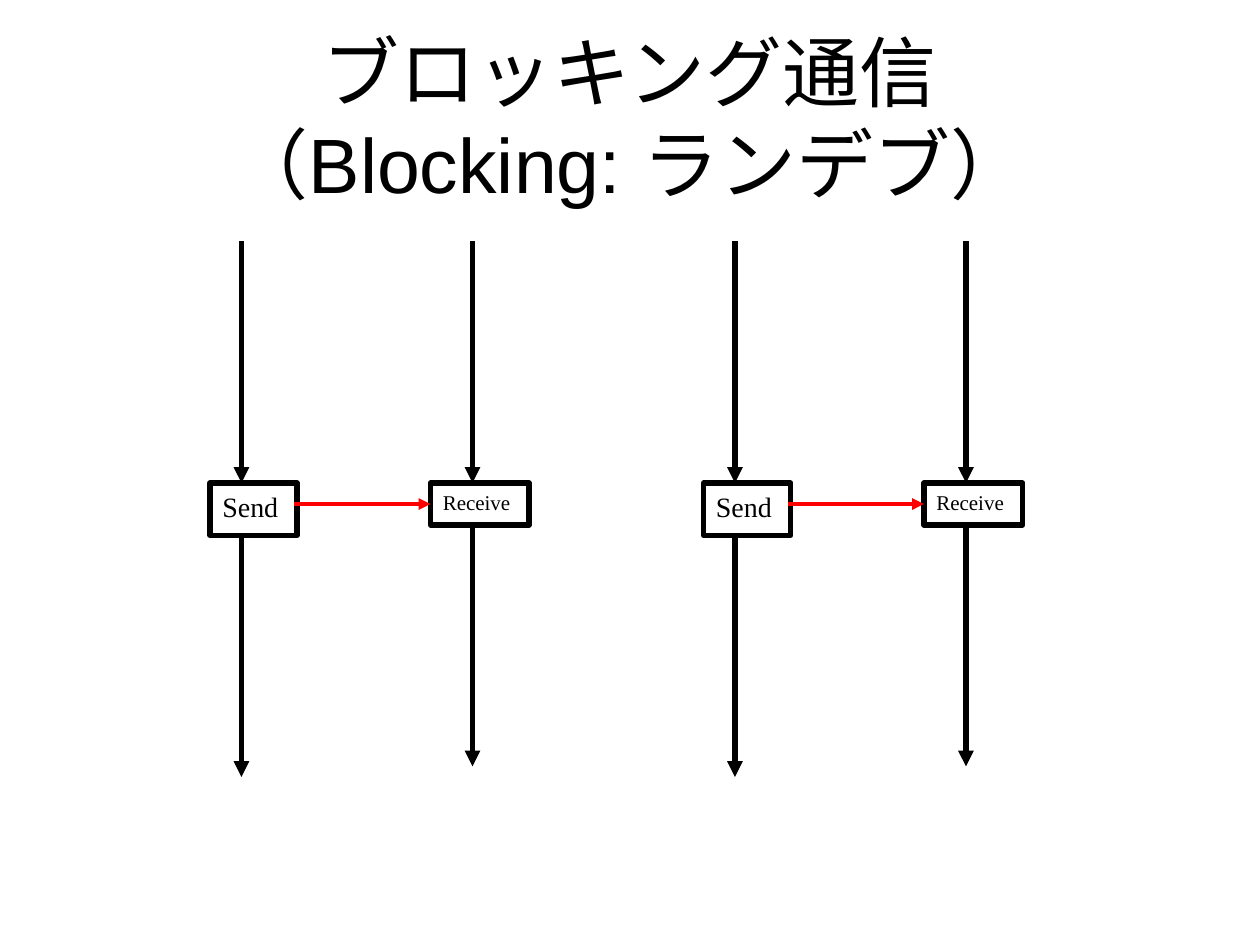
from dataclasses import dataclass
from lxml.etree import SubElement as Sub
from pptx import Presentation
from pptx.dml.color import RGBColor as RGB
from pptx.enum.shapes import MSO_CONNECTOR as Link, MSO_SHAPE as Form
from pptx.enum.text import MSO_ANCHOR as Anchor, MSO_AUTO_SIZE as Fit, PP_ALIGN as Align
from pptx.oxml.ns import qn
from pptx.util import Inches, Pt


@dataclass(frozen=True)
class Theme:
    ink: RGB = RGB(0, 0, 0)
    call: RGB = RGB(255, 0, 0)
    head: str = "Arial"
    body: str = "Times New Roman"
    title: float = 44
    send: float = 16
    recv: float = 12
    rule: float = 3
    thin: float = 2.25


T = Theme()
COLS, ROWS = 120, 90
WIDE, HIGH = Inches(10), Inches(7.5)


def col(n):
    return round(WIDE * n / COLS)


def row(n):
    return round(HIGH * n / ROWS)


def put(item, vals):
    for key, val in vals.items():
        setattr(item, key, val)


def style(para, face, size):
    put(para.font, {"name": face, "size": Pt(size)})
    para.font.color.rgb = T.ink


def arrow(slide, start, end, hue, width):
    line = slide.shapes.add_connector(
        Link.STRAIGHT, col(start[0]), row(start[1]), col(end[0]), row(end[1]))
    line.line.color.rgb = hue
    line.line.width = Pt(width)
    Sub(line.line._get_or_add_ln(), qn("a:tailEnd"), type="triangle")
    Sub(line._element.spPr, qn("a:effectLst"))
    return line


def block(slide, box, text, size):
    left, top, wide, high = box
    rect = slide.shapes.add_shape(
        Form.RECTANGLE, col(left), row(top), col(wide), row(high))
    rect.shadow.inherit = False
    rect.fill.background()
    rect.line.color.rgb = T.ink
    rect.line.width = Pt(T.rule)
    frame = rect.text_frame
    put(frame, {"text": text, "word_wrap": False, "auto_size": Fit.SHAPE_TO_FIT_TEXT,
                "vertical_anchor": Anchor.TOP})
    para = frame.paragraphs[0]
    para.alignment = Align.LEFT
    style(para, T.body, size)
    return rect


def lane(slide, x, top, box, text, size):
    base = box[1] + box[3]
    arrow(slide, (x, base), (x, base + 23), T.ink, T.rule)
    arrow(slide, (x, top), (x, box[1]), T.ink, T.rule)
    return block(slide, box, text, size)


def pair(slide, left, top):
    mid = top + 23
    lane(slide, left + 3, top, (left, mid, 8.3, 5), "Send", T.send)
    recv = lane(slide, left + 25, top, (left + 21, mid, 9.4, 4), "Receive", T.recv)
    call = arrow(slide, (left + 8, mid + 2), (left + 21, mid + 2), T.call, T.thin)
    call.end_connect(recv, 1)


def title(slide, box, text):
    left, top, wide, high = box
    head = slide.shapes.title
    put(head, {"left": col(left), "top": row(top), "width": col(wide), "height": row(high)})
    frame = head.text_frame
    put(frame, {"text": text, "word_wrap": True, "auto_size": Fit.NONE,
                "vertical_anchor": Anchor.MIDDLE})
    for para in frame.paragraphs:
        para.alignment = Align.CENTER
        style(para, T.head, T.title)
        for run in para.runs:
            style(run, T.head, T.title)


def main():
    deck = Presentation()
    put(deck, {"slide_width": WIDE, "slide_height": HIGH})
    slide = deck.slides.add_slide(deck.slide_layouts[5])
    title(slide, (6, 3.6, 108, 15), "ブロッキング通信\v（Blocking: ランデブ）")
    for left in (20, 67):
        pair(slide, left, 23)
    deck.save("out.pptx")


if __name__ == "__main__":
    main()
